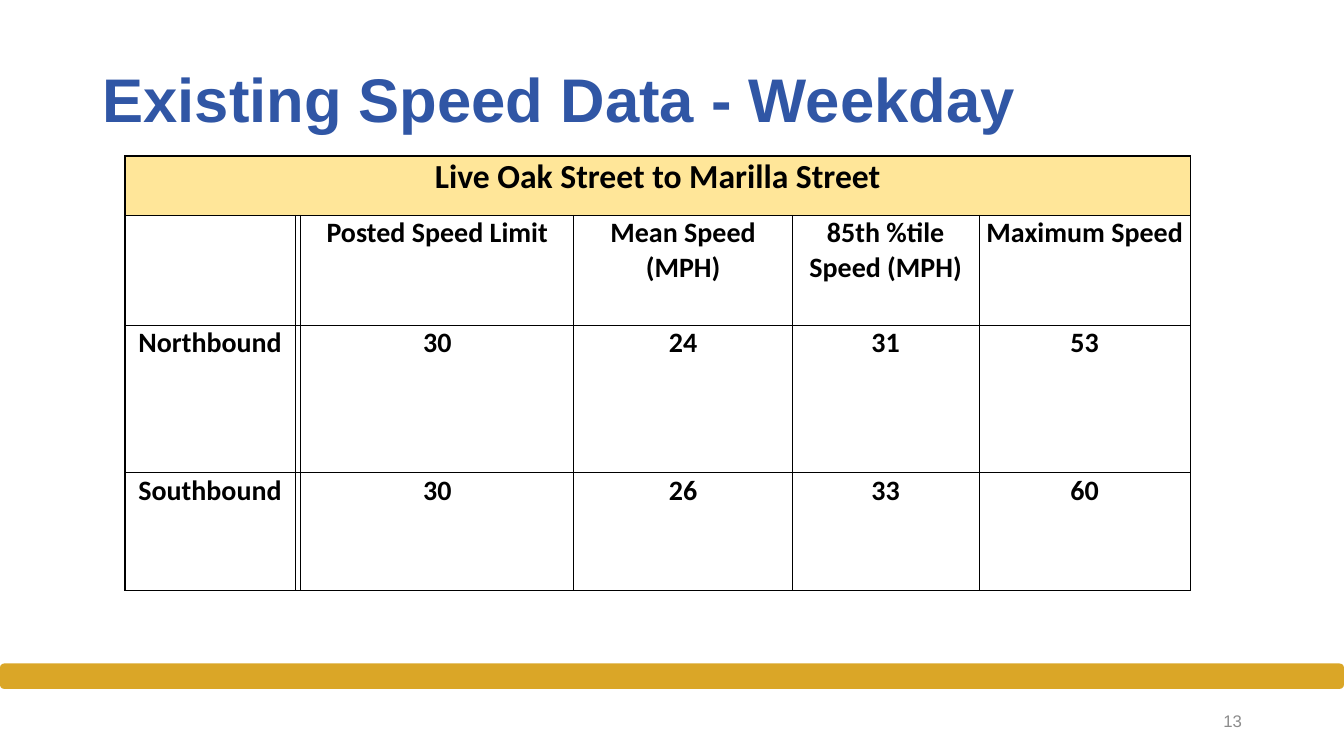
from dataclasses import dataclass

import pptx
import pptx.dml.color
import pptx.enum.shapes
import pptx.enum.text
import pptx.oxml
import pptx.oxml.ns
import pptx.presentation
import pptx.slide
import pptx.table
import pptx.util

Cm = pptx.util.Cm
Pt = pptx.util.Pt
RGBColor = pptx.dml.color.RGBColor
PP_ALIGN = pptx.enum.text.PP_ALIGN
MSO_ANCHOR = pptx.enum.text.MSO_ANCHOR

BLUE = RGBColor(0x30, 0x56, 0xA5)
GOLD = RGBColor(0xDA, 0xA6, 0x27)
CREAM = RGBColor(0xFF, 0xE6, 0x99)
BLACK = RGBColor(0, 0, 0)
GRAY = RGBColor(0x8C, 0x8C, 0x8C)

COLUMN_WIDTHS = (4.29, 0.1, 6.88, 5.51, 4.7, 5.33)
OUTER_BORDER = 1
INNER_BORDER = 0.5


@dataclass(frozen=True)
class SpeedRow:
    height: float
    texts: tuple[str, ...]
    size: int = 20
    fill: RGBColor | None = None


SPEED_ROWS = (
    SpeedRow(1.5, ("Live Oak Street to Marilla Street", "", "", "", "", ""), 24, CREAM),
    SpeedRow(2.77, ("", "", "Posted Speed Limit", "Mean Speed (MPH)",
                    "85th %tile Speed (MPH)", "Maximum Speed")),
    SpeedRow(3.71, ("Northbound", "", "30", "24", "31", "53")),
    SpeedRow(2.97, ("Southbound", "", "30", "26", "33", "60")),
)


def format_text(frame: pptx.text.text.TextFrame, font_name: str, size: int,
                color: RGBColor, bold: bool, align: PP_ALIGN) -> None:
    paragraph = frame.paragraphs[0]
    paragraph.alignment = align
    paragraph.font.size = Pt(size)
    for run in paragraph.runs:
        run.font.name = font_name
        run.font.size = Pt(size)
        run.font.color.rgb = color
        run.font.bold = bold


def set_border(cell: pptx.table._Cell, side: str, points: float) -> None:
    cell._tc.get_or_add_tcPr().append(pptx.oxml.parse_xml(
        f'<a:ln{side} {pptx.oxml.ns.nsdecls("a")} w="{int(Pt(points))}">'
        f'<a:solidFill><a:srgbClr val="{BLACK}"/></a:solidFill></a:ln{side}>'))


def add_title(slide: pptx.slide.Slide) -> None:
    title = slide.shapes.title
    title.left, title.top, title.width, title.height = Cm(2.33), Cm(0.74), Cm(29.21), Cm(3.68)
    frame = title.text_frame
    frame.text = "Existing Speed Data - Weekday"
    frame.auto_size = pptx.enum.text.MSO_AUTO_SIZE.NONE
    frame.vertical_anchor = MSO_ANCHOR.MIDDLE
    frame.paragraphs[0].line_spacing = 0.9
    format_text(frame, "Arial", 44, BLUE, True, PP_ALIGN.LEFT)


def add_gold_band(slide: pptx.slide.Slide) -> None:
    band = slide.shapes.add_shape(pptx.enum.shapes.MSO_SHAPE.ROUNDED_RECTANGLE,
                                  0, Cm(16.72), Cm(33.87), Cm(0.64))
    band.shadow.inherit = False
    band.fill.solid()
    band.fill.fore_color.rgb = GOLD
    band.line.fill.background()


def add_speed_table(slide: pptx.slide.Slide) -> None:
    table = slide.shapes.add_table(
        len(SPEED_ROWS), len(COLUMN_WIDTHS), Cm(3.15), Cm(3.93),
        Cm(sum(COLUMN_WIDTHS)), Cm(sum(row.height for row in SPEED_ROWS))).table
    table.first_row = False
    table.horz_banding = False
    for column, width in zip(table.columns, COLUMN_WIDTHS):
        column.width = Cm(width)
    last_column = len(COLUMN_WIDTHS) - 1
    for r, row in enumerate(SPEED_ROWS):
        table.rows[r].height = Cm(row.height)
        for c, text in enumerate(row.texts):
            cell = table.cell(r, c)
            cell.margin_left = cell.margin_right = cell.margin_top = Cm(0.02)
            cell.margin_bottom = 0
            cell.text_frame.text = text
            format_text(cell.text_frame, "Calibri", row.size, BLACK, True, PP_ALIGN.CENTER)
            outer = {"L": c == 0, "R": c == last_column, "T": r <= 1, "B": r == 0}
            for side, is_outer in outer.items():
                set_border(cell, side, OUTER_BORDER if is_outer else INNER_BORDER)
            if row.fill is None:
                cell.fill.background()
            else:
                cell.fill.solid()
                cell.fill.fore_color.rgb = row.fill
    table.cell(0, 0).merge(table.cell(0, last_column))


def add_page_number(slide: pptx.slide.Slide) -> None:
    frame = slide.shapes.add_textbox(Cm(23.93), Cm(17.65), Cm(7.62), Cm(1.02)).text_frame
    frame.word_wrap = True
    frame.vertical_anchor = MSO_ANCHOR.MIDDLE
    frame.text = "13"
    format_text(frame, "Arial", 12, GRAY, False, PP_ALIGN.RIGHT)


def main() -> None:
    deck = pptx.Presentation()
    deck.slide_width, deck.slide_height = Cm(33.87), Cm(19.05)
    slide = deck.slides.add_slide(deck.slide_layouts[5])
    add_gold_band(slide)
    add_title(slide)
    add_speed_table(slide)
    add_page_number(slide)
    deck.save("out.pptx")


if __name__ == "__main__":
    main()
